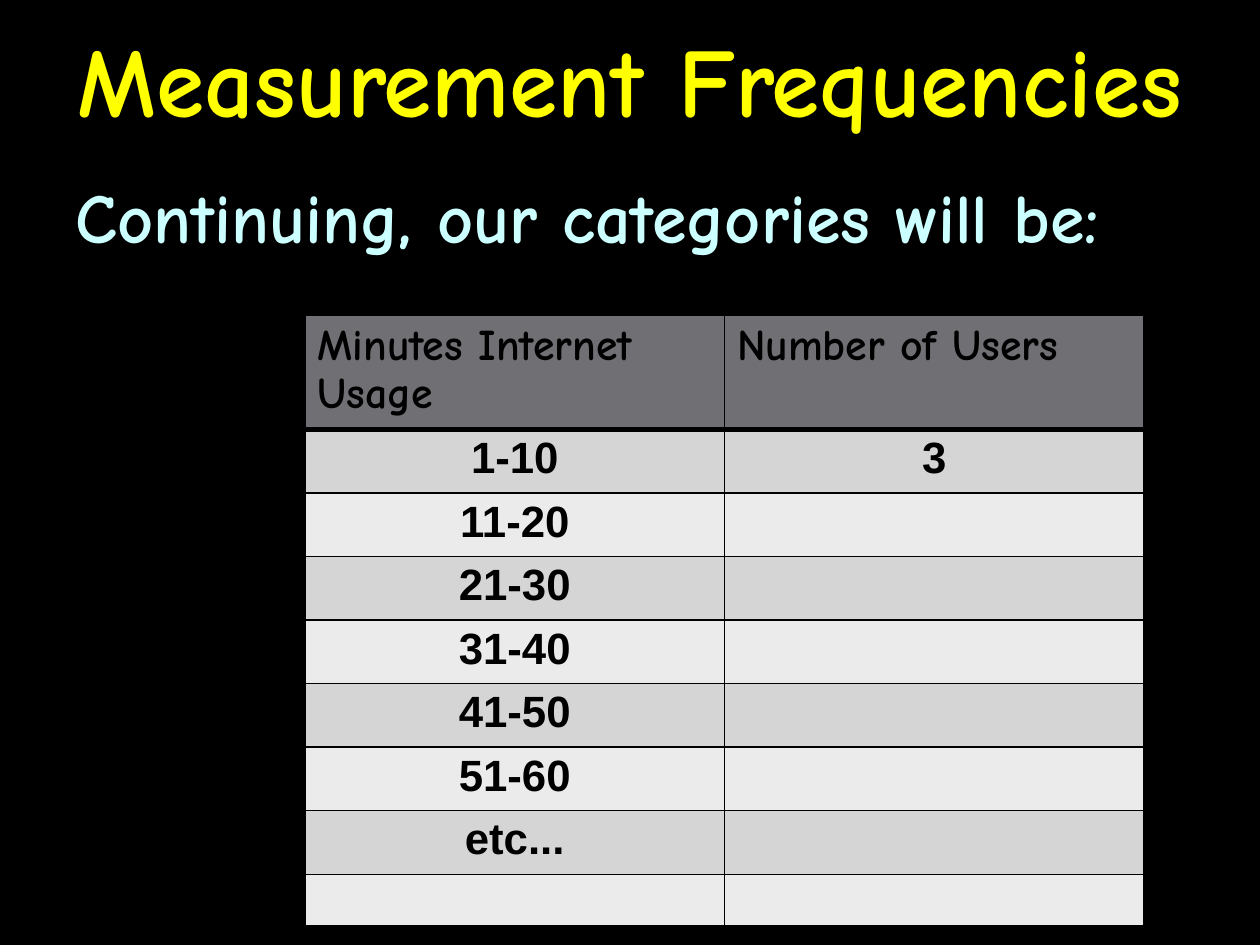
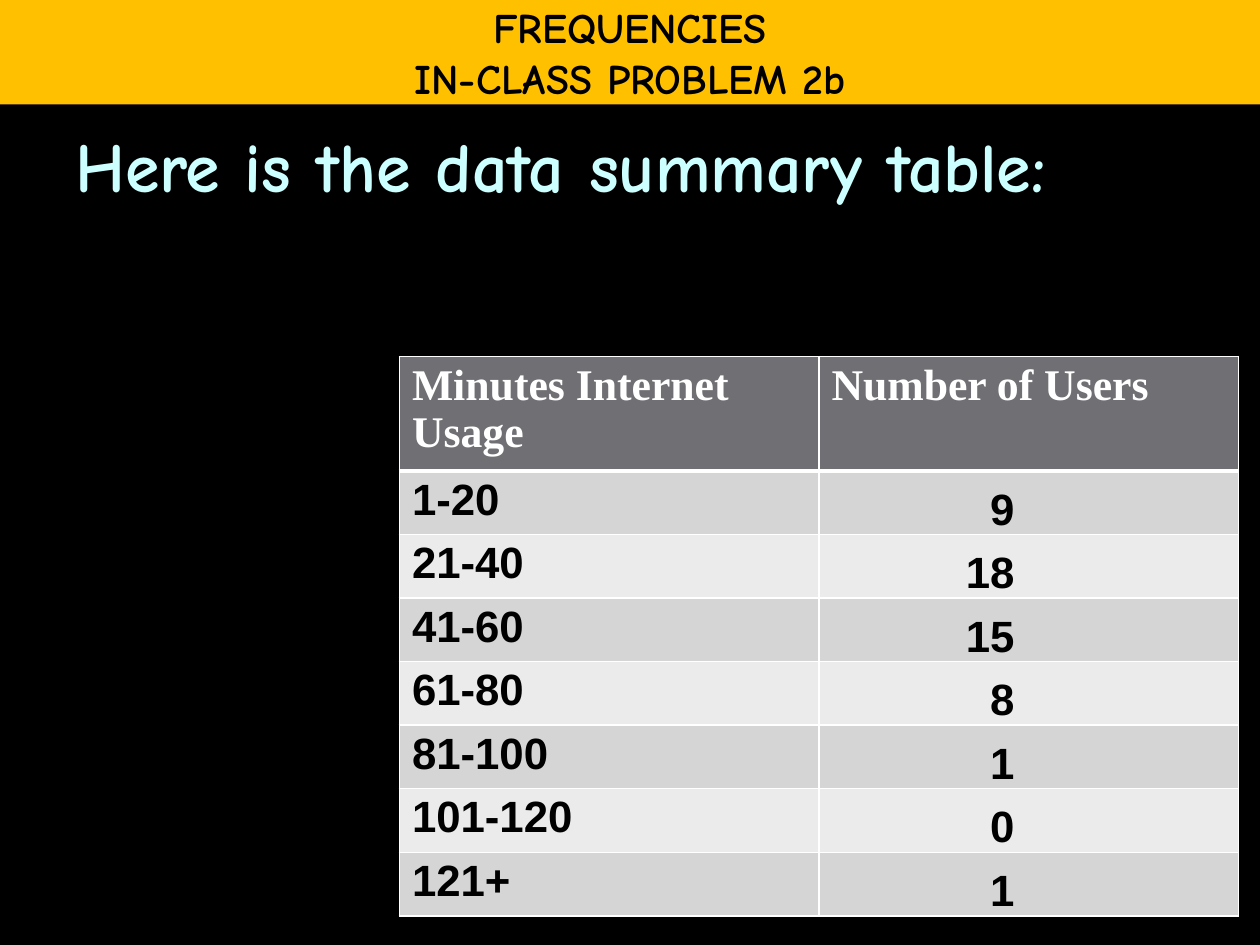
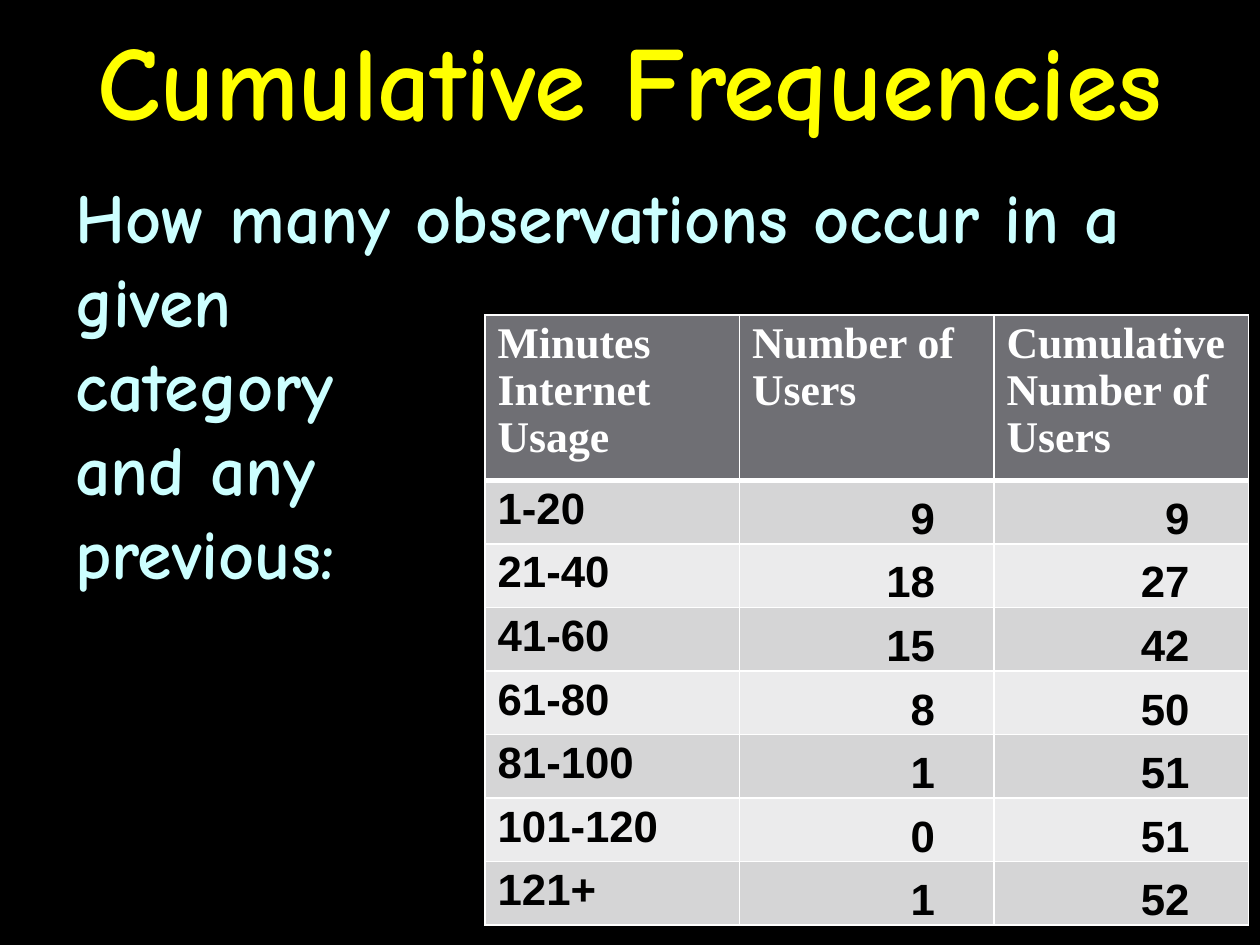
from itertools import accumulate

from lxml import etree
from pptx import Presentation
from pptx.dml.color import RGBColor
from pptx.enum.shapes import MSO_SHAPE
from pptx.enum.text import MSO_ANCHOR, PP_ALIGN
from pptx.oxml.ns import qn
from pptx.util import Inches, Pt

RECTANGLE = MSO_SHAPE.RECTANGLE
LEFT, CENTER, RIGHT = PP_ALIGN.LEFT, PP_ALIGN.CENTER, PP_ALIGN.RIGHT
TOP, MIDDLE, BOTTOM = MSO_ANCHOR.TOP, MSO_ANCHOR.MIDDLE, MSO_ANCHOR.BOTTOM

BLACK = RGBColor(0x00, 0x00, 0x00)
WHITE = RGBColor(0xFF, 0xFF, 0xFF)
YELLOW = RGBColor(0xFF, 0xFF, 0x00)
PALE_CYAN = RGBColor(0xCC, 0xFF, 0xFF)
AMBER = RGBColor(0xFF, 0xC0, 0x00)
HEADER_GRAY = RGBColor(0x6F, 0x6F, 0x74)
BAND_GRAYS = (RGBColor(0xD5, 0xD5, 0xD6), RGBColor(0xEB, 0xEB, 0xEC))

COMIC, SERIF, SANS = "Comic Neue", "Times New Roman", "Arial"
TABLE_SIZE = 25
TABLE_LINE_SPACING = 0.97
ROW_HEIGHT = 0.41
NUMBER_EDGE = 1.55  # right edge of the figures, from the left of their column

# Table contents
USAGE, USERS, CUMULATIVE = ("Minutes Internet Usage", "Number of Users",
                            "Cumulative Number of Users")
SMALL_RANGES = ["1-10", "11-20", "21-30", "31-40", "41-50", "51-60", "etc...", ""]
RANGES = ["1-20", "21-40", "41-60", "61-80", "81-100", "101-120", "121+"]
COUNTS = [9, 18, 15, 8, 1, 0, 1]


class Deck:
    """Holds the shared style and the slide being built."""

    def __init__(self):
        self.presentation = Presentation()
        self.presentation.slide_width = Inches(10)
        self.presentation.slide_height = Inches(7.5)
        self.slide = None

    def new_slide(self):
        self.slide = self.presentation.slides.add_slide(
            self.presentation.slide_layouts[6])
        fill = self.slide.background.fill
        fill.solid()
        fill.fore_color.rgb = BLACK

    def set_text(self, frame, lines, size, color, font=COMIC, align=LEFT):
        frame.text = "\n".join(lines)
        for paragraph in frame.paragraphs:
            paragraph.alignment = align
            paragraph.font.name = font
            paragraph.font.size = Pt(size)
            paragraph.font.bold = True
            paragraph.font.color.rgb = color

    def text(self, left, top, width, height, lines, size, color,
             align=LEFT, anchor=TOP):
        frame = self.slide.shapes.add_textbox(
            Inches(left), Inches(top), Inches(width), Inches(height)).text_frame
        frame.word_wrap = True
        frame.vertical_anchor = anchor
        self.set_text(frame, lines, size, color, align=align)

    def title(self, text, size):
        self.text(0, 0, 10, 1.25, [text], size, YELLOW, CENTER, MIDDLE)

    def body(self, *lines, top=1.33, width=9):
        self.text(0.5, top, width, 6.17, lines, 40, PALE_CYAN)

    def banner(self, *lines):
        shape = self.slide.shapes.add_shape(
            RECTANGLE, 0, 0, Inches(10), Inches(0.83))
        shape.shadow.inherit = False
        shape.fill.solid()
        shape.fill.fore_color.rgb = AMBER
        shape.line.fill.background()
        frame = shape.text_frame
        frame.word_wrap = False
        frame.vertical_anchor = MIDDLE
        self.set_text(frame, lines, 24, BLACK, align=CENTER)

    def borders(self, cell, color, top, bottom):
        properties = cell._tc.get_or_add_tcPr()
        for side, points in (("L", 1), ("R", 1), ("T", top), ("B", bottom)):
            line = etree.SubElement(properties, qn(f"a:ln{side}"), w=str(Pt(points)))
            fill = etree.SubElement(line, qn("a:solidFill"))
            etree.SubElement(fill, qn("a:srgbClr"), val=str(color))

    def table(self, left, top, column_width, headers, rows, header_font=SERIF,
              line_color=WHITE, label_align=LEFT, header_height=ROW_HEIGHT):
        contents = [headers, *rows]
        table = self.slide.shapes.add_table(
            len(contents), len(headers), Inches(left), Inches(top),
            Inches(column_width * len(headers)),
            Inches(header_height + ROW_HEIGHT * len(rows))).table
        table.first_row = table.horz_banding = False
        for column in table.columns:
            column.width = Inches(column_width)
        for index, values in enumerate(contents):
            is_header = index == 0
            table.rows[index].height = Inches(header_height if is_header else ROW_HEIGHT)
            for position, value in enumerate(values):
                cell = table.cell(index, position)
                self.borders(cell, line_color, 3 if index == 1 else 1,
                             3 if is_header else 1)
                cell.fill.solid()
                cell.fill.fore_color.rgb = (
                    HEADER_GRAY if is_header else BAND_GRAYS[(index - 1) % 2])
                if value == "":
                    continue
                align = LEFT if is_header else label_align
                if isinstance(value, int):
                    align = RIGHT
                    cell.vertical_anchor = BOTTOM
                    cell.margin_left = cell.margin_top = Inches(0.01)
                    cell.margin_right = Inches(column_width - NUMBER_EDGE)
                    cell.margin_bottom = 0
                self.set_text(cell.text_frame, [str(value)], TABLE_SIZE,
                              line_color if is_header else BLACK,
                              header_font if is_header else SANS, align)
                cell.text_frame.paragraphs[0].line_spacing = TABLE_LINE_SPACING


def main():
    deck = Deck()

    # Measurement categories
    deck.new_slide()
    deck.body("Continuing, our categories will be:")
    deck.title("Measurement Frequencies", 56)
    first_counts = ["3"] + [""] * (len(SMALL_RANGES) - 1)
    deck.table(2.42, 2.5, 3.33, [USAGE, USERS], list(zip(SMALL_RANGES, first_counts)),
               header_font=COMIC, line_color=BLACK, label_align=CENTER)

    # Data summary
    deck.new_slide()
    deck.body("Here is the data summary table:", top=0.92)
    deck.table(3.17, 2.83, 3.33, [USAGE, USERS], list(zip(RANGES, COUNTS)))
    deck.banner("FREQUENCIES", "IN-CLASS PROBLEM 2b")

    # Cumulative frequencies
    deck.new_slide()
    deck.title("Cumulative Frequencies", 60)
    deck.body("How many observations occur in a given", "category", "and any",
              "previous:", width=9.5)
    deck.table(3.85, 2.5, 2.02, [USAGE, USERS, CUMULATIVE],
               list(zip(RANGES, COUNTS, accumulate(COUNTS))), header_height=1)

    deck.presentation.save("out.pptx")


if __name__ == "__main__":
    main()
